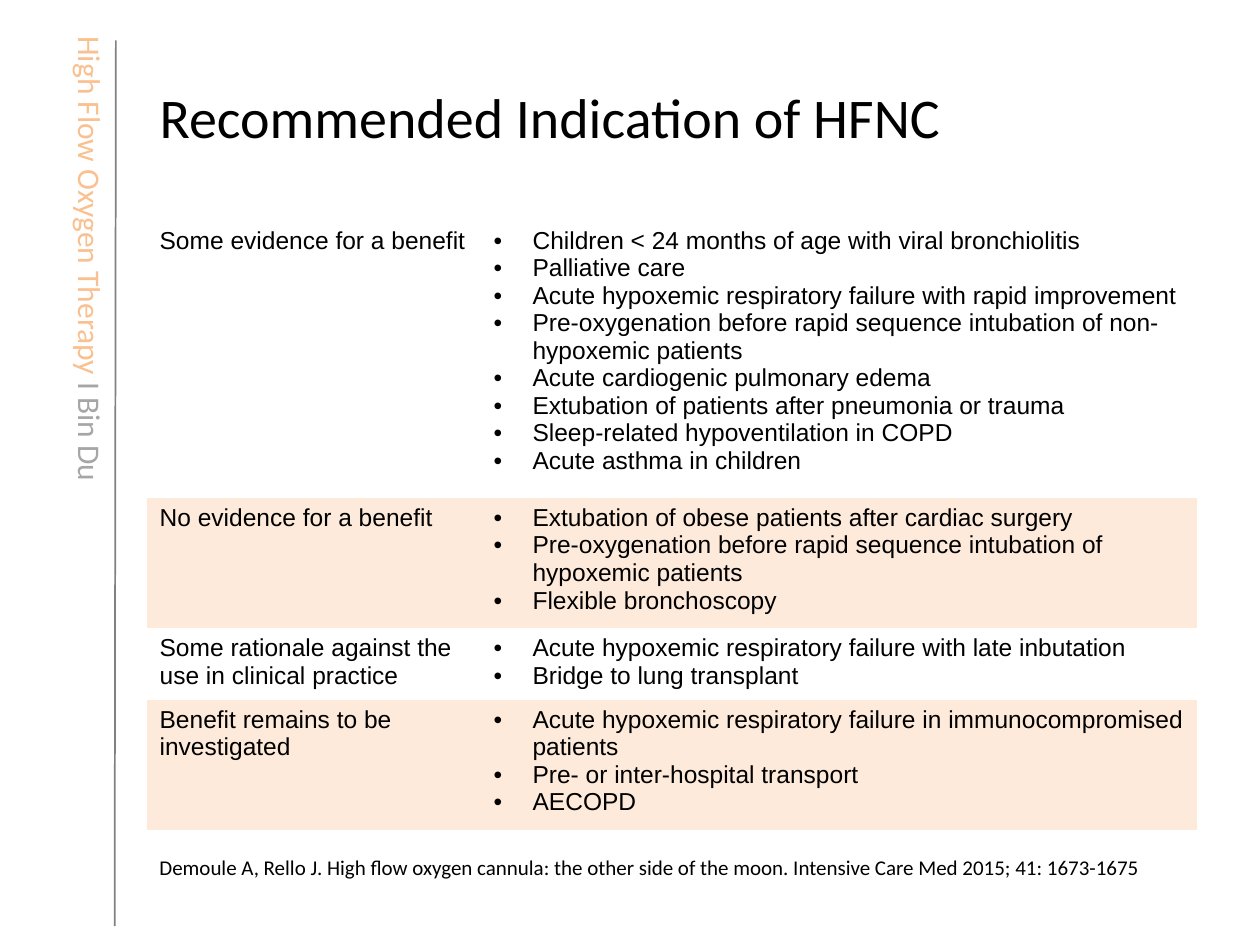
"""Build the slide on recommended indications of HFNC."""
from lxml.etree import SubElement
from pptx import Presentation
from pptx.dml.color import RGBColor
from pptx.enum.shapes import MSO_CONNECTOR as Connector
from pptx.enum.text import MSO_ANCHOR as Anchor, PP_ALIGN as Align
from pptx.oxml.ns import qn
from pptx.util import Inches, Pt

WIDTH, HEIGHT = Inches(10), Inches(7.5)
LEFT, SPAN = 11.67, 83.33
LINE_HEIGHT, CELL_PADDING = 0.21, 0.1
LABEL_WIDTH, LIST_WIDTH = 26.5, 56.83
NO_STYLE = "{2D5ABB26-0587-4C30-8999-92F81FD0307C}"
COLORS = {
    "text": "000000",
    "rule": "808080",
    "course": "FAC090",
    "author": "A6A6A6",
    "plain": "FFFFFF",
    "band": "FDEADA",
}
INDICATIONS = [
    ("Some evidence for a benefit", 9, [
        "Children < 24 months of age with viral bronchiolitis",
        "Palliative care",
        "Acute hypoxemic respiratory failure with rapid improvement",
        "Pre-oxygenation before rapid sequence intubation of non-hypoxemic patients",
        "Acute cardiogenic pulmonary edema",
        "Extubation of patients after pneumonia or trauma",
        "Sleep-related hypoventilation in COPD",
        "Acute asthma in children",
    ]),
    ("No evidence for a benefit", 4, [
        "Extubation of obese patients after cardiac surgery",
        "Pre-oxygenation before rapid sequence intubation of hypoxemic patients",
        "Flexible bronchoscopy",
    ]),
    ("Some rationale against the use in clinical practice", 2, [
        "Acute hypoxemic respiratory failure with late inbutation",
        "Bridge to lung transplant",
    ]),
    ("Benefit remains to be investigated", 4, [
        "Acute hypoxemic respiratory failure in immunocompromised patients",
        "Pre- or inter-hospital transport",
        "AECOPD",
    ]),
]


def color(name):
    """Return a palette colour."""
    return RGBColor.from_string(COLORS[name])


def across(percent):
    """Return a percentage of the slide's width."""
    return int(WIDTH * percent / 100)


def down(percent):
    """Return a percentage of the slide's height."""
    return int(HEIGHT * percent / 100)


def area(left, top, width, height):
    """Return a rectangle given in percentages of the slide."""
    return across(left), down(top), across(width), down(height)


def add_text(para, text, size=14, font="Arial", tint="text"):
    """Add a formatted span to a paragraph."""
    span = para.add_run()
    span.text = text
    span.font.size = Pt(size)
    span.font.name = font
    span.font.color.rgb = color(tint)


def add_bullet(para):
    """Give a paragraph a hanging bullet."""
    props = para._p.get_or_add_pPr()
    props.set("marL", str(Inches(0.31)))
    props.set("indent", str(-Inches(0.31)))
    SubElement(props, qn("a:buFont")).set("typeface", "Arial")
    SubElement(props, qn("a:buChar")).set("char", "•")


def add_box(page, place, spans, wrap=True, rotation=0, **style):
    """Add a one-paragraph text box made of (text, tint) spans."""
    box = page.shapes.add_textbox(*area(*place))
    box.rotation = rotation
    box.text_frame.word_wrap = wrap
    for text, tint in spans:
        add_text(box.text_frame.paragraphs[0], text, tint=tint, **style)


def add_side_rule(page):
    """Add the line beside the course name."""
    rule = page.shapes.add_connector(
        Connector.STRAIGHT, across(9.2), down(4.27), across(9.1), down(98))
    rule.line.color.rgb = color("rule")
    rule.line.width = Pt(1)
    SubElement(rule._element.spPr, qn("a:effectLst"))


def add_title(page, text):
    """Place and fill the title placeholder."""
    title = page.shapes.title
    title.left, title.top, title.width, title.height = area(LEFT, 4, SPAN, 16.67)
    title.text_frame.vertical_anchor = Anchor.MIDDLE
    para = title.text_frame.paragraphs[0]
    para.alignment = Align.LEFT
    add_text(para, text, size=32, font="Calibri")


def fill_cell(cell, lines, fill, bulleted=False):
    """Write paragraphs into a cell and colour it."""
    cell.fill.solid()
    cell.fill.fore_color.rgb = color(fill)
    frame = cell.text_frame
    for index, line in enumerate(lines):
        para = frame.add_paragraph() if index else frame.paragraphs[0]
        if bulleted:
            add_bullet(para)
        add_text(para, line)


def add_indications(page):
    """Add the table of evidence levels and indications."""
    frame = page.shapes.add_table(
        len(INDICATIONS), 2, *area(LEFT, 23.33, SPAN, 60))
    table = frame.table
    table.first_row = table.horz_banding = False
    table._tbl.tblPr.find(qn("a:tableStyleId")).text = NO_STYLE
    for column, width in zip(table.columns, (LABEL_WIDTH, LIST_WIDTH)):
        column.width = across(width)
    for index, (label, line_count, items) in enumerate(INDICATIONS):
        fill = "band" if index % 2 else "plain"
        table.rows[index].height = Inches(line_count * LINE_HEIGHT + CELL_PADDING)
        fill_cell(table.cell(index, 0), [label], fill)
        fill_cell(table.cell(index, 1), items, fill, bulleted=True)


def main():
    """Build and save the deck."""
    deck = Presentation()
    deck.slide_width, deck.slide_height = WIDTH, HEIGHT
    page = deck.slides.add_slide(deck.slide_layouts[5])
    add_side_rule(page)
    add_box(page, (-11.7, 25.07, 37.8, 5.33),
            [("High Flow Oxygen Therapy ", "course"), ("Ι Bin Du", "author")],
            wrap=False, rotation=90, size=18, font="Calibri")
    add_title(page, "Recommended Indication of HFNC")
    add_indications(page)
    add_box(page, (LEFT, 89.73, SPAN, 4),
            [("Demoule A, Rello J. High flow oxygen cannula: the other side of "
              "the moon. Intensive Care Med 2015; 41: 1673-1675", "text")],
            size=12, font="Calibri")
    deck.save("out.pptx")


if __name__ == "__main__":
    main()
